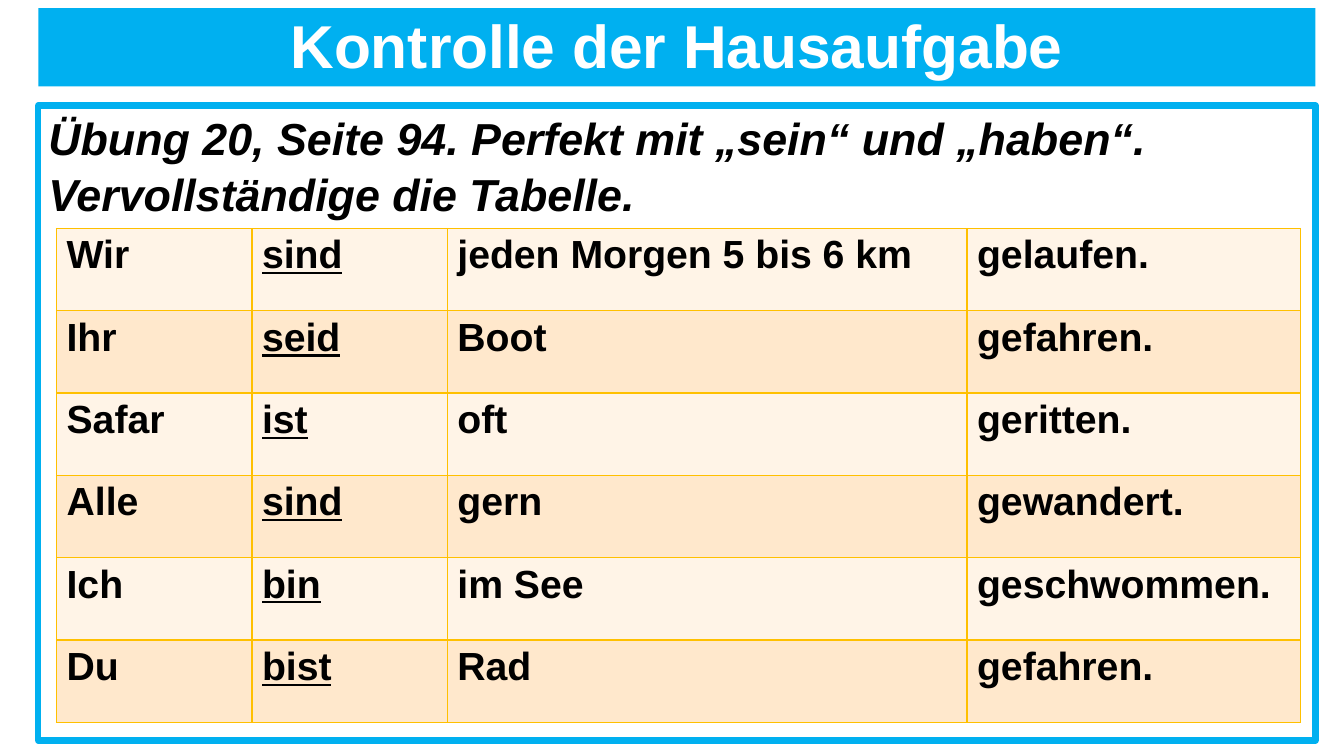
from lxml import etree
from pptx import Presentation
from pptx.dml.color import RGBColor
from pptx.enum.shapes import MSO_SHAPE
from pptx.enum.text import MSO_ANCHOR, PP_ALIGN
from pptx.oxml.ns import qn
from pptx.util import Pt

RECTANGLE = MSO_SHAPE.RECTANGLE
TOP, BOTTOM = MSO_ANCHOR.TOP, MSO_ANCHOR.BOTTOM
LEFT, CENTER = PP_ALIGN.LEFT, PP_ALIGN.CENTER

BLUE = RGBColor(0x00, 0xB0, 0xF0)
WHITE = RGBColor(0xFF, 0xFF, 0xFF)
BLACK = RGBColor(0x00, 0x00, 0x00)
GOLD = RGBColor(0xFF, 0xC0, 0x00)
BANDS = (RGBColor(0xFF, 0xF4, 0xE7), RGBColor(0xFF, 0xE8, 0xCC))

FONT = "Arial"
BOX_LEFT, BOX_WIDTH = 27.4, 912.2
COLUMN_WIDTHS = (139.6, 139.6, 371.2, 238.3)
ROW_HEIGHT = 58.8
TASK = (
    "Übung 20, Seite 94. Perfekt mit „sein“ und „haben“.",
    "Vervollständige die Tabelle.",
)
SENTENCES = (
    ("Wir", "sind", "jeden Morgen 5 bis 6 km", "gelaufen."),
    ("Ihr", "seid", "Boot", "gefahren."),
    ("Safar", "ist", "oft", "geritten."),
    ("Alle", "sind", "gern", "gewandert."),
    ("Ich", "bin", "im See", "geschwommen."),
    ("Du", "bist", "Rad", "gefahren."),
)


def set_font(p, size, color, italic=False, underline=False):
    font = p.font
    font.name = FONT
    font.size = Pt(size)
    font.bold = True
    font.italic = italic
    font.underline = underline
    font.color.rgb = color


def add_box(slide, top, height, lines, anchor, align):
    sp = slide.shapes.add_shape(
        RECTANGLE, Pt(BOX_LEFT), Pt(top), Pt(BOX_WIDTH), Pt(height)
    )
    sp.shadow.inherit = False
    tf = sp.text_frame
    tf.word_wrap = True
    tf.vertical_anchor = anchor
    tf.text = "\n".join(lines)
    for p in tf.paragraphs:
        p.alignment = align
    return sp


def add_title(slide):
    sp = add_box(slide, 5.8, 56, ["Kontrolle der Hausaufgabe"], BOTTOM, CENTER)
    sp.fill.solid()
    sp.fill.fore_color.rgb = BLUE
    sp.line.fill.background()
    p = sp.text_frame.paragraphs[0]
    p.line_spacing = 0.9
    set_font(p, 43.2, WHITE)


def add_task(slide):
    sp = add_box(slide, 75.4, 453.6, TASK, TOP, LEFT)
    sp.fill.background()
    sp.line.color.rgb = BLUE
    sp.line.width = Pt(4.5)
    for p in sp.text_frame.paragraphs:
        p.space_before = Pt(1.8)
        set_font(p, 32, BLACK, italic=True)


def set_borders(cell):
    tcPr = cell._tc.get_or_add_tcPr()
    for index, side in enumerate(("a:lnL", "a:lnR", "a:lnT", "a:lnB")):
        ln = etree.Element(qn(side), w=str(Pt(1)))
        fill = etree.SubElement(ln, qn("a:solidFill"))
        etree.SubElement(fill, qn("a:srgbClr"), val=str(GOLD))
        tcPr.insert(index, ln)


def add_sentence_table(slide, left, top):
    rows, cols = len(SENTENCES), len(COLUMN_WIDTHS)
    table = slide.shapes.add_table(
        rows, cols, Pt(left), Pt(top), Pt(sum(COLUMN_WIDTHS)), Pt(rows * ROW_HEIGHT)
    ).table
    for column, width in zip(table.columns, COLUMN_WIDTHS):
        column.width = Pt(width)
    for r, sentence in enumerate(SENTENCES):
        table.rows[r].height = Pt(ROW_HEIGHT)
        for c, text in enumerate(sentence):
            cell = table.cell(r, c)
            cell.text = text
            cell.fill.solid()
            cell.fill.fore_color.rgb = BANDS[r % 2]
            set_borders(cell)
            set_font(cell.text_frame.paragraphs[0], 28, BLACK, underline=c == 1)


def main():
    prs = Presentation()
    prs.slide_width, prs.slide_height = Pt(960), Pt(540)
    slide = prs.slides.add_slide(prs.slide_layouts[6])
    add_title(slide)
    add_task(slide)
    add_sentence_table(slide, 40.4, 163.2)
    prs.save("out.pptx")


if __name__ == "__main__":
    main()
